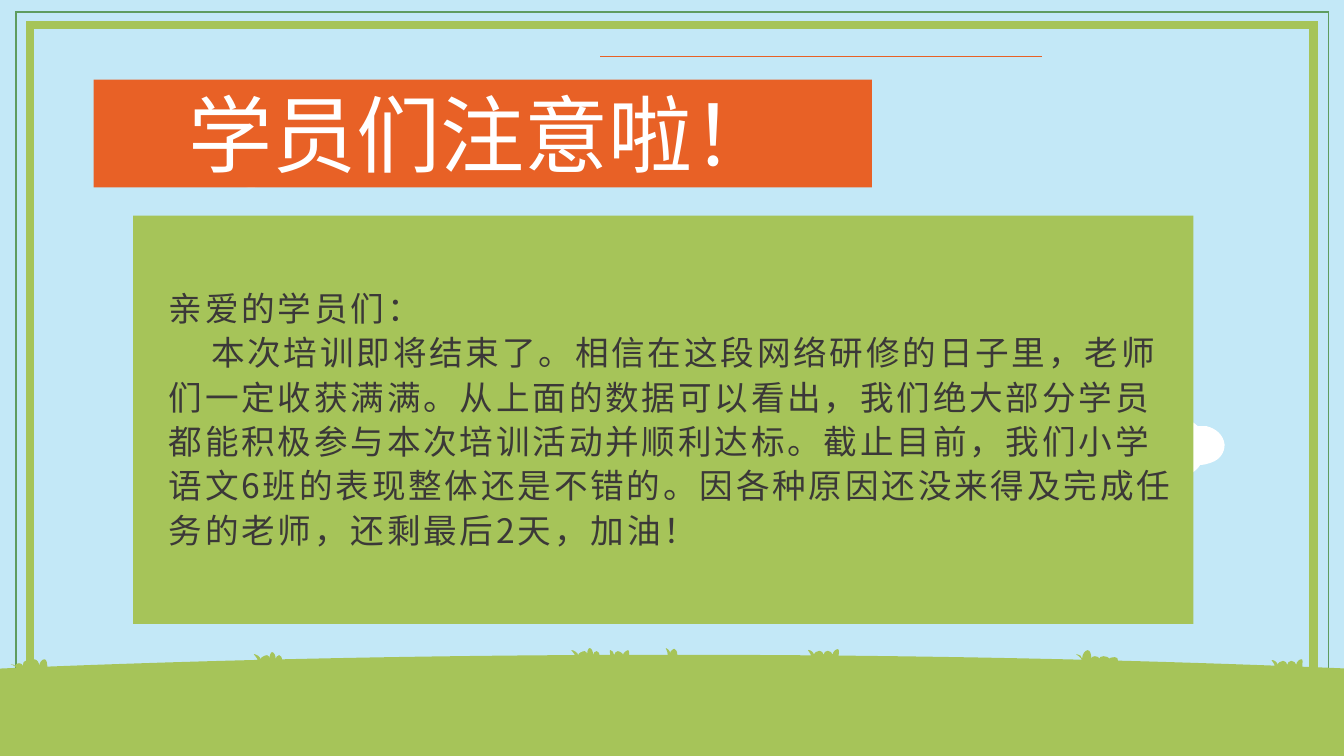
from collections import namedtuple

from lxml import etree
from pptx import Presentation
from pptx.dml.color import RGBColor
from pptx.enum.shapes import MSO_CONNECTOR, MSO_SHAPE
from pptx.enum.text import MSO_ANCHOR, MSO_AUTO_SIZE, PP_ALIGN
from pptx.oxml.ns import qn
from pptx.util import Inches, Pt

RECTANGLE = MSO_SHAPE.RECTANGLE
STRAIGHT = MSO_CONNECTOR.STRAIGHT
MIDDLE = MSO_ANCHOR.MIDDLE
CENTER, LEFT = PP_ALIGN.CENTER, PP_ALIGN.LEFT
NO_AUTOFIT = MSO_AUTO_SIZE.NONE

SKY = RGBColor(0xC3, 0xE8, 0xF7)
GRASS = RGBColor(0xA6, 0xC4, 0x59)
LEAF = RGBColor(0x5E, 0x9C, 0x5F)
ORANGE = RGBColor(0xE8, 0x61, 0x26)
WHITE = RGBColor(0xFF, 0xFF, 0xFF)
INK = RGBColor(0x3B, 0x38, 0x38)
TITLE_FONT = "Noto Sans CJK JP"
BODY_FONT = "Noto Sans CJK SC"

COLUMNS, ROWS = 160, 90
WIDTH, HEIGHT = Inches(13.33), Inches(7.5)
OUTLINE_UNITS = 1000

Box = namedtuple("Box", "left top width height")  # in columns and rows

TITLE = "学员们注意啦！"
GREETING = "亲爱的学员们："
MESSAGE = (
    "本次培训即将结束了。相信在这段网络研修的日子里，老师们一定收获满满。"
    "从上面的数据可以看出，我们绝大部分学员都能积极参与本次培训活动并顺利达标。"
    "截止目前，我们小学语文6班的表现整体还是不错的。"
    "因各种原因还没来得及完成任务的老师，还剩最后2天，加油！"
)

# Curves as (control, control, end) in shares of the box they are drawn in
CLOUD_START = (.52, 0)
CLOUD_CURVES = [
    ((.44, 0), (.34, .03), (.25, .2)), ((.2, .2), (.09, .24), (.04, .32)),
    ((0, .39), (.01, .53), (.04, .61)), ((.07, .69), (.15, .73), (.21, .73)),
    ((.24, .8), (.31, .92), (.36, .92)), ((.38, .92), (.41, .9), (.43, .88)),
    ((.46, .97), (.52, 1), (.57, 1)), ((.65, 1), (.73, .92), (.77, .8)),
    ((.81, .8), (.84, .78), (.87, .76)), ((.95, .71), (.99, .59), (.99, .46)),
    ((.98, .29), (.91, .19), (.83, .15)), ((.8, .15), (.77, .15), (.75, .15)),
    ((.71, .07), (.65, .03), (.52, 0)),
]
CLOUDS = [Box(132.72, 49.68, 13.2, 7.08), Box(19.2, 12.24, 18.84, 10.08)]

# Blade tips in shares of a tuft's box
PAIR = [(.05, 0), (.75, .1)]
TRIO = [(.2, 0), (.52, .15), (.97, 0)]
LEANING = [(.07, .2), (.5, .3), (.67, 0), (.9, .3)]
UPRIGHT = [(.12, .1), (.44, .2), (.68, .2), (.97, 0)]
FALLING = [(.07, .33), (.32, 0), (.48, .5), (.68, .5), (.93, .58)]
RISING = [(.05, .55), (.26, .45), (.45, .2), (.66, .1), (.92, .1)]
ARCHED = [(.1, .38), (.33, .19), (.54, 0), (.73, .25), (.94, .44)]
TUFTS = [
    (Box(127.8, 77.4, 5.28, 1.44), FALLING),
    (Box(95.76, 77.28, 4.08, .96), UPRIGHT),
    (Box(79.2, 77.16, 1.44, .84), PAIR),
    (Box(67.8, 77.16, 3.6, 1.2), LEANING),
    (Box(72.12, 77.4, 2.76, .84), TRIO),
    (Box(1.08, 78.36, 4.56, 1.32), RISING),
    (Box(66.96, 77.76, 5.76, 1.92), ARCHED),
    (Box(30, 77.64, 3.6, 1.2), LEANING),
    (Box(150.96, 78.48, 4.08, .96), UPRIGHT),
]


def across(columns):
    return round(WIDTH * columns / COLUMNS)


def down(rows):
    return round(HEIGHT * rows / ROWS)


def emu(box):
    return across(box.left), down(box.top), across(box.width), down(box.height)


def add_rectangle(slide, box, fill=None, line=None, line_width=1):
    shape = slide.shapes.add_shape(RECTANGLE, *emu(box))
    shape.shadow.inherit = False
    if fill is None:
        shape.fill.background()
    else:
        shape.fill.solid()
        shape.fill.fore_color.rgb = fill
    if line is None:
        shape.line.fill.background()
    else:
        shape.line.color.rgb = line
        shape.line.width = Pt(line_width)
        corner = etree.SubElement(shape.line._get_or_add_ln(), qn("a:miter"))
        corner.set("lim", "800000")


def add_command(outline, tag, points):
    command = etree.SubElement(outline, qn(tag))
    for x, y in points:
        point = etree.SubElement(command, qn("a:pt"))
        point.set("x", str(round(x * OUTLINE_UNITS)))
        point.set("y", str(round(y * OUTLINE_UNITS)))


def add_curved_shape(slide, box, start, segments, fill):
    """Draw a closed outline of curves (three points) and lines (one point)."""
    left, top, width, height = emu(box)
    builder = slide.shapes.build_freeform(left, top)
    builder.add_line_segments(
        [(left + width, top), (left + width, top + height), (left, top + height)])
    shape = builder.convert_to_shape()
    outline = next(shape._element.iter(qn("a:path")))
    for command in list(outline):
        outline.remove(command)
    outline.set("w", str(OUTLINE_UNITS))
    outline.set("h", str(OUTLINE_UNITS))
    add_command(outline, "a:moveTo", [start])
    for points in segments:
        add_command(outline, "a:cubicBezTo" if len(points) == 3 else "a:lnTo", points)
    etree.SubElement(outline, qn("a:close"))
    shape.shadow.inherit = False
    shape.fill.solid()
    shape.fill.fore_color.rgb = fill
    shape.line.fill.background()


def add_tuft(slide, box, tips):
    """Draw round-tipped blades that meet in notches halfway between tips."""
    notches = [((left[0] + right[0]) / 2, .7) for left, right in zip(tips, tips[1:])]
    feet = [(.2, 1)] + notches + [(1, 1)]
    curves = []
    for tip, before, after in zip(tips, feet, feet[1:]):
        middle = (tip[1] + .7) / 2
        curves.append(((before[0], middle), (tip[0] - .06, tip[1]), tip))
        curves.append(((tip[0] + .06, tip[1]), (after[0], middle), after))
    add_curved_shape(slide, box, feet[0], curves, GRASS)


def add_meadow(slide, box):
    crest = ((.32, 0), (.68, 0), (1, .17))
    add_curved_shape(slide, box, (0, .17), [crest, [(1, 1)], [(0, 1)]], GRASS)
    for tuft_box, tips in TUFTS:
        add_tuft(slide, tuft_box, tips)


def add_frames(slide, box):
    left, top, width, height = box
    add_rectangle(slide, box, line=LEAF)
    inner = Box(left + 1.68, top + 1.56, width - 3.48, height - 3.12)
    add_rectangle(slide, inner, line=GRASS, line_width=6)


def add_rule(slide, left, right, row):
    line = slide.shapes.add_connector(
        STRAIGHT, across(right), down(row), across(left), down(row))
    line.line.color.rgb = ORANGE
    line.line.width = Pt(.5)
    etree.SubElement(line._element.spPr, qn("a:effectLst"))


def add_text(paragraph, text, font, size, color):
    run = paragraph.add_run()
    run.text = text
    run.font.size = Pt(size)
    run.font.name = font
    run.font.color.rgb = color
    properties = run.font._element
    etree.SubElement(properties, qn("a:ea")).set("typeface", font)
    return properties


def add_title(slide, box):
    title = slide.shapes.title
    title.left, title.top, title.width, title.height = emu(
        Box(box.left + 7.8, box.top - 6.12, 77, 25))
    slide.shapes._spTree.append(title._element)  # in front of the banner
    frame = title.text_frame
    frame.word_wrap = True
    frame.auto_size = NO_AUTOFIT
    frame.vertical_anchor = MIDDLE
    paragraph = frame.paragraphs[0]
    paragraph.alignment = CENTER
    add_text(paragraph, TITLE, TITLE_FONT, 60, WHITE)


def add_letter(slide, box):
    add_rectangle(slide, box, fill=GRASS)
    text_box = slide.shapes.add_textbox(
        *emu(Box(box.left + 3.06, box.top + 2.64, box.width - 3.12, box.height - 6)))
    frame = text_box.text_frame
    frame.word_wrap = True
    frame.vertical_anchor = MIDDLE
    for text, indent in ((GREETING, 0), (MESSAGE, .42)):
        paragraph = frame.paragraphs[0] if text == GREETING else frame.add_paragraph()
        paragraph.alignment = LEFT
        paragraph.line_spacing = 1.1
        paragraph._p.get_or_add_pPr().set("indent", str(Inches(indent)))
        add_text(paragraph, text, BODY_FONT, 24, INK).set("spc", "200")


def main():
    presentation = Presentation()
    presentation.slide_width, presentation.slide_height = WIDTH, HEIGHT
    slide = presentation.slides.add_slide(presentation.slide_layouts[5])
    slide.background.fill.solid()
    slide.background.fill.fore_color.rgb = SKY
    banner = Box(11.16, 9.48, 92.64, 12.84)

    for cloud in CLOUDS:
        add_curved_shape(slide, cloud, CLOUD_START, CLOUD_CURVES, WHITE)
    add_rectangle(slide, banner, fill=ORANGE)
    add_rule(slide, 71.4, 124, 6.76)
    add_frames(slide, Box(1.92, 1.44, 156.24, 87))
    add_meadow(slide, Box(-.24, 77.4, 160.92, 12.96))
    add_title(slide, banner)
    add_letter(slide, Box(15.84, 25.68, 126.24, 48.6))
    presentation.save("out.pptx")


if __name__ == "__main__":
    main()
